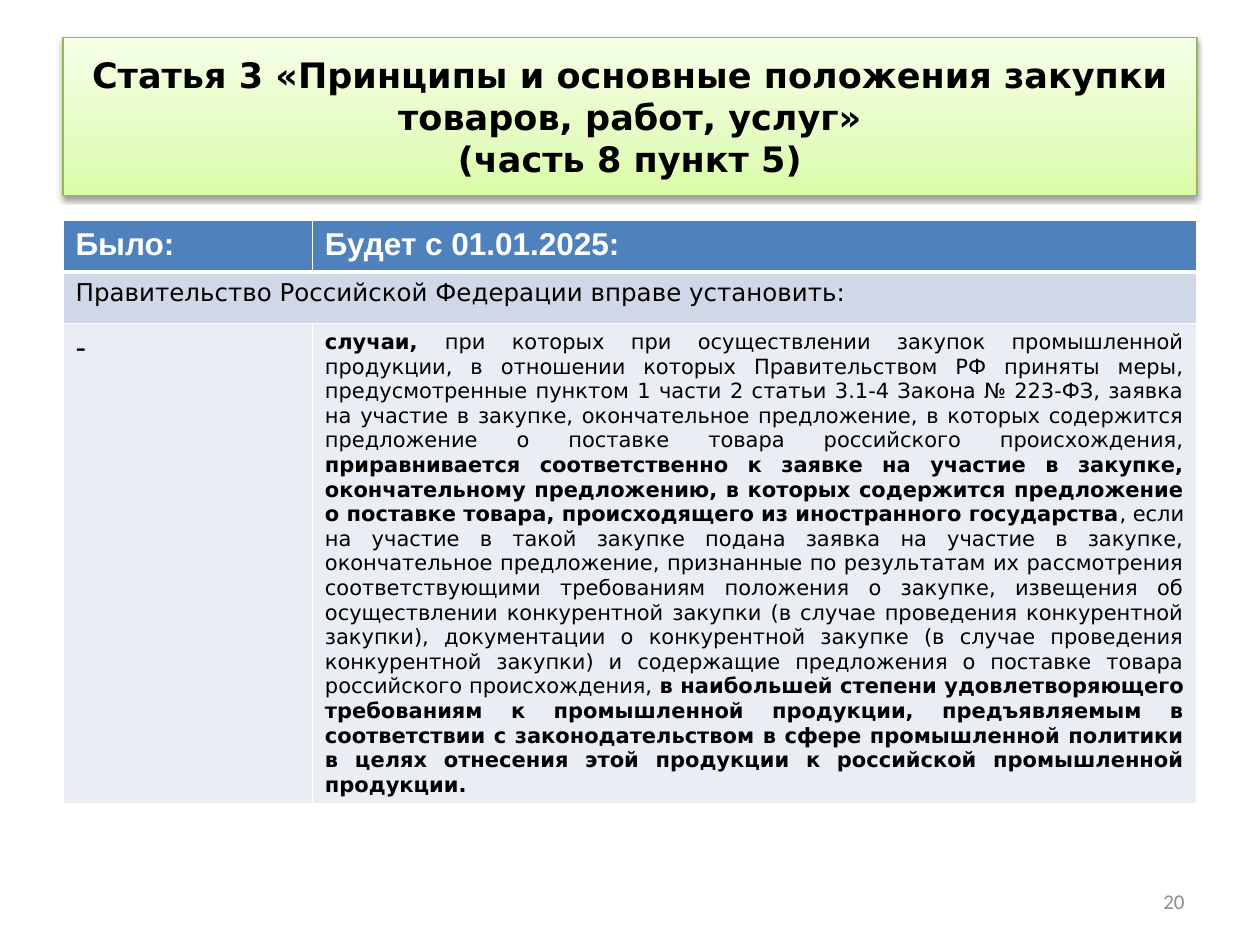
from copy import deepcopy
from dataclasses import dataclass
from typing import NamedTuple

from lxml import etree
from pptx import Presentation
from pptx.dml.color import RGBColor
from pptx.enum import shapes, text
from pptx.oxml import ns
from pptx.util import Pt


@dataclass(frozen=True)
class Theme:
    black: str = "000000"
    white: str = "FFFFFF"
    header: str = "4F81BD"
    band: str = "D0D8E8"
    body: str = "E9EDF4"
    outline: str = "98B955"
    number: str = "8C8C8C"
    gradient: tuple = ((0, "DAFDA7"), (0.35, "E4FCC2"), (1, "F5FFE7"))
    main_font: str = "DejaVu Sans"
    head_font: str = "Arial"
    number_font: str = "Calibri"
    title_size: int = 20
    head_size: int = 18
    lead_size: int = 14
    small_size: int = 12


THEME = Theme()


class Span(NamedTuple):
    words: str
    bold: bool = False


class Style(NamedTuple):
    font: str
    size: int
    color: str = THEME.black
    align: text.PP_ALIGN = text.PP_ALIGN.LEFT


class CellSpec(NamedTuple):
    row: int
    column: int
    fill: str
    style: Style
    spans: tuple
    bottom_line: int = 1


HEAD = Style(THEME.head_font, THEME.head_size, THEME.white)
TITLE = Style(THEME.main_font, THEME.title_size, align=text.PP_ALIGN.CENTER)
LEAD = Style(THEME.main_font, THEME.lead_size)
DASH = Style(THEME.head_font, THEME.head_size)
BODY = Style(THEME.main_font, THEME.small_size, align=text.PP_ALIGN.JUSTIFY)
NUMBER = Style(THEME.number_font, THEME.small_size, THEME.number, text.PP_ALIGN.RIGHT)

RULE = (
    Span("случаи, ", True),
    Span("при которых при осуществлении закупок промышленной продукции, в отношении "
         "которых Правительством РФ приняты меры, предусмотренные пунктом 1 части 2 "
         "статьи 3.1-4 Закона № 223-ФЗ, заявка на участие в закупке, окончательное "
         "предложение, в которых содержится предложение о поставке товара российского "
         "происхождения, "),
    Span("приравнивается соответственно к заявке на участие в закупке, окончательному "
         "предложению, в которых содержится предложение о поставке товара, "
         "происходящего из иностранного государства", True),
    Span(", если на участие в такой закупке подана заявка на участие в закупке, "
         "окончательное предложение, признанные по результатам их рассмотрения "
         "соответствующими требованиям положения о закупке, извещения об осуществлении "
         "конкурентной закупки (в случае проведения конкурентной закупки), документации "
         "о конкурентной закупке (в случае проведения конкурентной закупки) и содержащие "
         "предложения о поставке товара российского происхождения, "),
    Span("в наибольшей степени удовлетворяющего требованиям к промышленной продукции, "
         "предъявляемым в соответствии с законодательством в сфере промышленной политики "
         "в целях отнесения этой продукции к российской промышленной продукции.", True),
)

CELLS = (
    CellSpec(0, 0, THEME.header, HEAD, (Span("Было:", True),), 3),
    CellSpec(0, 1, THEME.header, HEAD, (Span("Будет с 01.01.2025:", True),), 3),
    CellSpec(1, 0, THEME.band, LEAD,
             (Span("Правительство Российской Федерации вправе установить:"),)),
    CellSpec(2, 0, THEME.body, DASH, (Span("-"),)),
    CellSpec(2, 1, THEME.body, BODY, RULE),
)


def rgb(color: str) -> RGBColor:
    return RGBColor.from_string(color)


def write(paragraph, spans: tuple, style: Style) -> None:
    paragraph.alignment = style.align
    for span in spans:
        run = paragraph.add_run()
        run.text = span.words
        run.font.name = style.font
        run.font.size = Pt(style.size)
        run.font.bold = span.bold
        run.font.color.rgb = rgb(style.color)


def add_color(parent, color: str):
    return etree.SubElement(parent, ns.qn("a:srgbClr"), val=color)


def add_soft_shadow(box) -> None:
    box.shadow.inherit = False
    effects = box._element.spPr.find(ns.qn("a:effectLst"))
    shadow = etree.SubElement(effects, ns.qn("a:outerShdw"), blurRad=str(Pt(3.1)),
                              dist=str(Pt(1.6)), dir="5400000", rotWithShape="0")
    etree.SubElement(add_color(shadow, THEME.black), ns.qn("a:alpha"), val="38000")


def fill_gradient(box) -> None:
    box.fill.gradient()
    box.fill.gradient_angle = 90
    stop_list = box._element.spPr.find(ns.qn("a:gradFill")).find(ns.qn("a:gsLst"))
    stop_list.append(deepcopy(stop_list[-1]))
    for stop, (position, color) in zip(box.fill.gradient_stops, THEME.gradient):
        stop.position = position
        stop.color.rgb = rgb(color)


def add_title(page) -> None:
    box = page.shapes.add_shape(shapes.MSO_SHAPE.RECTANGLE, Pt(36), Pt(21.6), Pt(648), Pt(90))
    fill_gradient(box)
    box.line.color.rgb = rgb(THEME.outline)
    box.line.width = Pt(0.75)
    add_soft_shadow(box)
    frame = box.text_frame
    frame.word_wrap = True
    frame.vertical_anchor = text.MSO_ANCHOR.MIDDLE
    write(frame.paragraphs[0],
          (Span("Статья 3 «Принципы и основные положения закупки товаров, работ, услуг»", True),),
          TITLE)
    write(frame.add_paragraph(), (Span("(часть 8 пункт 5)", True),), TITLE)


def set_borders(cell, bottom: int) -> None:
    properties = cell._tc.get_or_add_tcPr()
    for side, width in (("L", 1), ("R", 1), ("T", 1), ("B", bottom)):
        line = etree.SubElement(properties, ns.qn(f"a:ln{side}"), w=str(Pt(width)))
        add_color(etree.SubElement(line, ns.qn("a:solidFill")), THEME.white)


def add_comparison(page) -> None:
    widths, heights = (142.5, 505.5), (29.5, 29.5, 274.5)
    table = page.shapes.add_table(len(heights), len(widths), Pt(36), Pt(126),
                                  Pt(sum(widths)), Pt(sum(heights))).table
    for column, width in zip(table.columns, widths):
        column.width = Pt(width)
    for row, height in zip(table.rows, heights):
        row.height = Pt(height)
    table.cell(1, 0).merge(table.cell(1, 1))
    for spec in CELLS:
        cell = table.cell(spec.row, spec.column)
        set_borders(cell, spec.bottom_line)
        cell.fill.solid()
        cell.fill.fore_color.rgb = rgb(spec.fill)
        write(cell.text_frame.paragraphs[0], spec.spans, spec.style)


def add_page_number(page) -> None:
    box = page.shapes.add_textbox(Pt(516), Pt(500.5), Pt(168), Pt(28.75))
    box.text_frame.word_wrap = True
    box.text_frame.vertical_anchor = text.MSO_ANCHOR.MIDDLE
    write(box.text_frame.paragraphs[0], (Span("20"),), NUMBER)


def main() -> None:
    deck = Presentation()
    deck.slide_width, deck.slide_height = Pt(720), Pt(540)
    page = deck.slides.add_slide(deck.slide_layouts[6])
    # Heading, comparison table, page number
    add_title(page)
    add_comparison(page)
    add_page_number(page)
    deck.save("out.pptx")


if __name__ == "__main__":
    main()
